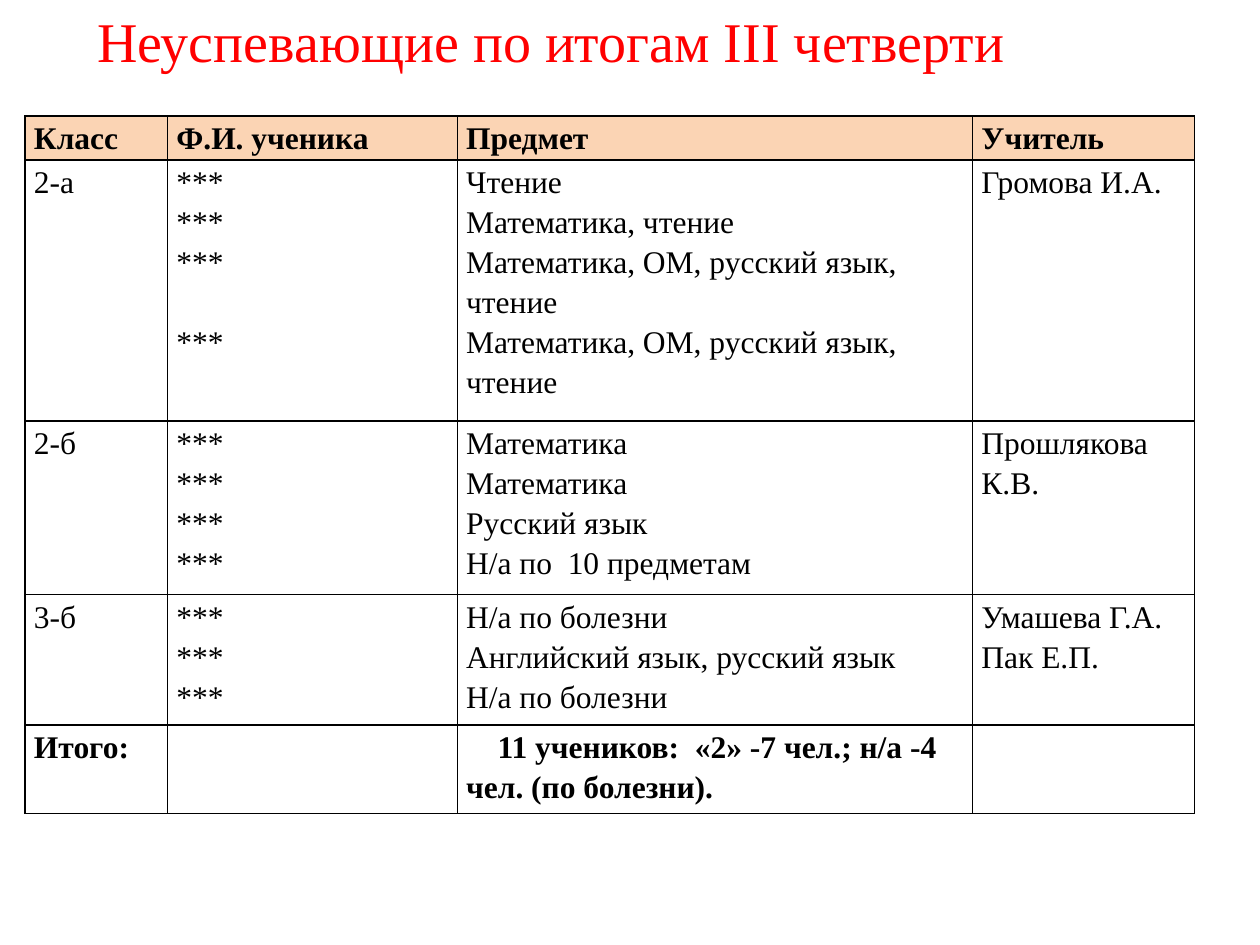
from lxml.etree import SubElement
from pptx import Presentation
from pptx.dml.color import RGBColor
from pptx.enum.text import MSO_ANCHOR, MSO_AUTO_SIZE, PP_ALIGN
from pptx.oxml.ns import qn
from pptx.util import Inches, Pt

# Content: each cell is a list of paragraphs
TITLE = "Неуспевающие по итогам III четверти"
STAR = "***"
ROWS = [
    [["Класс"], ["Ф.И. ученика"], ["Предмет"], ["Учитель"]],
    [["2-а"], [STAR] * 4,
     ["Чтение", "Математика, чтение"] + ["Математика, ОМ, русский язык, чтение"] * 2,
     ["Громова И.А."]],
    [["2-б"], [STAR] * 4,
     ["Математика", "Математика", "Русский язык", "Н/а по  10 предметам"],
     ["Прошлякова К.В."]],
    [["3-б"], [STAR] * 3,
     ["Н/а по болезни", "Английский язык, русский язык", "Н/а по болезни"],
     ["Умашева Г.А.", "Пак Е.П."]],
    [["Итого:"], [], ["11 учеников:  «2» -7 чел.; н/а -4 чел. (по болезни)."], []],
]
COL_WIDTHS = [1.13, 2.3, 4.09, 1.76]
ROW_HEIGHTS = [0.35, 2.06, 1.38, 1.03, 0.7]
HEADER, TOTAL = 0, len(ROWS) - 1
FONT = "Times New Roman"


def rgb(color):
    return RGBColor.from_string(color)


def add_text(p, text, size=18, color="000000", bold=False):
    r = p.add_run()
    r.text = text
    r.font.name, r.font.size, r.font.bold = FONT, Pt(size), bold
    r.font.color.rgb = rgb(color)


def add_borders(cell, color="000000", width=1):
    tcPr = cell._tc.get_or_add_tcPr()
    for side in ("a:lnL", "a:lnR", "a:lnT", "a:lnB"):
        ln = SubElement(tcPr, qn(side), w=str(Pt(width)))
        SubElement(SubElement(ln, qn("a:solidFill")), qn("a:srgbClr"), val=color)


def fill_cell(cell, lines, fill=None, bold=False):
    cell.margin_left = cell.margin_right = Inches(0.07)
    cell.margin_top = cell.margin_bottom = 0
    add_borders(cell)
    if fill:
        cell.fill.solid()
        cell.fill.fore_color.rgb = rgb(fill)
    else:
        cell.fill.background()
    tf = cell.text_frame
    for i, line in enumerate(lines):
        p = tf.add_paragraph() if i else tf.paragraphs[0]
        p.line_spacing = 1.15
        add_text(p, line, bold=bold)


prs = Presentation()
prs.slide_width, prs.slide_height = Inches(10), Inches(7.5)
s = prs.slides.add_slide(prs.slide_layouts[5])

# Title
title = s.shapes.title
title.left, title.top = Inches(0.67), Inches(0)
title.width, title.height = Inches(7.48), Inches(0.64)
tf = title.text_frame
tf.word_wrap, tf.auto_size = False, MSO_AUTO_SIZE.SHAPE_TO_FIT_TEXT
tf.vertical_anchor = MSO_ANCHOR.TOP
tf.paragraphs[0].alignment = PP_ALIGN.LEFT
add_text(tf.paragraphs[0], TITLE, size=32, color="FF0000")

# Table
table = s.shapes.add_table(
    len(ROWS), len(COL_WIDTHS), Inches(0.2), Inches(0.92),
    Inches(sum(COL_WIDTHS)), Inches(sum(ROW_HEIGHTS))).table
table.first_row = table.horz_banding = False
for column, width in zip(table.columns, COL_WIDTHS):
    column.width = Inches(width)
for i, (row, height) in enumerate(zip(ROWS, ROW_HEIGHTS)):
    table.rows[i].height = Inches(height)
    for j, lines in enumerate(row):
        fill_cell(table.cell(i, j), lines, bold=i in (HEADER, TOTAL),
                  fill="FBD4B4" if i == HEADER else None)

# The last pupil of 2-а lines up with a subject below a wrapped one
table.cell(1, 1).text_frame.paragraphs[3].space_before = Pt(23)
# First-line indent of the total
total = table.cell(TOTAL, 2).text_frame.paragraphs[0]
total._p.get_or_add_pPr().set("indent", str(Inches(0.25)))

prs.save("out.pptx")
